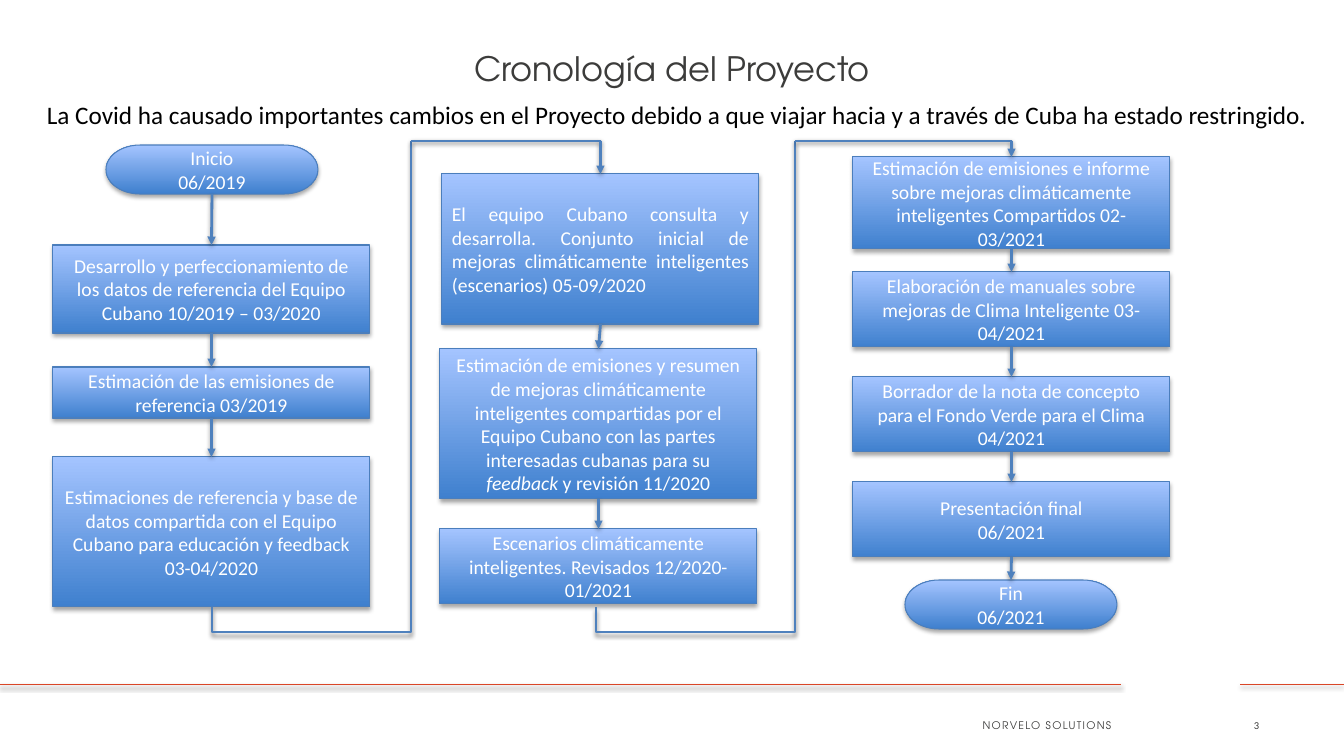
import pptx
import pptx.util
import pptx.dml.color
import pptx.enum.shapes
import pptx.enum.text
import pptx.oxml
import pptx.oxml.ns

RGBColor = pptx.dml.color.RGBColor
SHAPE = pptx.enum.shapes.MSO_SHAPE
CONNECTOR = pptx.enum.shapes.MSO_CONNECTOR
ALIGN = pptx.enum.text.PP_ALIGN
ANCHOR = pptx.enum.text.MSO_ANCHOR

DARK_BLUE = RGBColor(0x3F, 0x80, 0xCE)
LIGHT_BLUE = RGBColor(0xA4, 0xC4, 0xFF)
BORDER_BLUE = RGBColor(0x4B, 0x7E, 0xBC)
ARROW_BLUE = RGBColor(0x4F, 0x81, 0xBD)
RULE_RED = RGBColor(0xDA, 0x46, 0x27)
GREY = RGBColor(0x3C, 0x3C, 0x3B)
BLACK = RGBColor(0, 0, 0)
WHITE = RGBColor(255, 255, 255)
HEADING_FONT = "TeX Gyre Adventor"
BODY_FONT = "Calibri"

TITLE = "Cronología del Proyecto"
SUBTITLE = ("La Covid ha causado importantes cambios en el Proyecto debido a que "
            "viajar hacia y a través de Cuba ha estado restringido.")
FOOTER = "NORVELO SOLUTIONS"
PAGE_NUMBER = "3"

# Each step: left, top, height, lines of text; asterisks enclose italics.
COLUMNS = [
    [
        (106, 145, 49, ["Inicio", "06/2019"]),
        (53, 245, 88, ["Desarrollo y perfeccionamiento de los datos de referencia "
                       "del Equipo Cubano 10/2019 – 03/2020"]),
        (53, 367, 51, ["Estimación de las emisiones de referencia 03/2019"]),
        (53, 457, 150, ["Estimaciones de referencia y base de datos compartida con el "
                        "Equipo Cubano para educación y feedback", "03-04/2020"]),
    ],
    [
        (442, 174, 150, ["El equipo Cubano consulta y desarrolla. Conjunto inicial de mejoras "
                         "climáticamente inteligentes (escenarios) 05-09/2020"]),
        (440, 349, 150, ["Estimación de emisiones y resumen de mejoras climáticamente "
                         "inteligentes compartidas por el Equipo Cubano con las partes "
                         "interesadas cubanas para su *feedback* y revisión 11/2020"]),
        (440, 529, 75, ["Escenarios climáticamente inteligentes. Revisados 12/2020-01/2021"]),
    ],
    [
        (853, 157, 92, ["Estimación de emisiones e informe sobre mejoras climáticamente "
                        "inteligentes Compartidos 02-03/2021"]),
        (853, 272, 75, ["Elaboración de manuales sobre mejoras de Clima Inteligente 03-04/2021"]),
        (853, 377, 75, ["Borrador de la nota de concepto para el Fondo Verde para el Clima "
                        "04/2021"]),
        (853, 482, 75, ["Presentación final", "06/2021"]),
        (905, 580, 49, ["Fin", "06/2021"]),
    ],
]
TERMINATORS = ("Inicio", "Fin")
JUSTIFIED_STEP = (442, 174)
BOX_WIDTH, TERMINATOR_WIDTH = 317, 212
LOOP_STARTS = [212, 596]
LOOP_WIDTH, LOOP_TOP, LOOP_BOTTOM, LOOP_DROP = 199, 141, 607, 25
RULES = [(1344, 1240), (1121, 0)]
RULE_TOP = 685


def px(length):
    return round(length * 914400 / 100.8)


def add_shadow(shape, opacity, distance):
    properties = shape._element.spPr
    effects = properties.find(pptx.oxml.ns.qn("a:effectLst"))
    if effects is not None:
        properties.remove(effects)
    properties.append(pptx.oxml.parse_xml(
        f'<a:effectLst {pptx.oxml.ns.nsdecls("a")}>'
        f'<a:outerShdw blurRad="40000" dist="{distance}" dir="5400000" rotWithShape="0">'
        f'<a:srgbClr val="000000"><a:alpha val="{opacity * 1000}"/></a:srgbClr>'
        '</a:outerShdw></a:effectLst>'))


def write(frame, lines, size, font, color, align):
    frame.vertical_anchor = ANCHOR.MIDDLE
    for index, line in enumerate(lines):
        paragraph = frame.paragraphs[0] if index == 0 else frame.add_paragraph()
        paragraph.alignment = align
        paragraph.font.size = pptx.util.Pt(size)
        paragraph.font.name = font
        paragraph.font.color.rgb = color
        for position, part in enumerate(line.split("*")):
            run = paragraph.add_run()
            run.text = part
            if position % 2:
                run.font.italic = True


def add_text(slide, area, text, size, font, color, align, wrap=True):
    box = slide.shapes.add_textbox(*map(px, area))
    box.text_frame.word_wrap = wrap
    write(box.text_frame, [text], size, font, color, align)
    return box


def add_step(slide, left, top, height, lines):
    terminator = lines[0] in TERMINATORS
    kind = SHAPE.FLOWCHART_TERMINATOR if terminator else SHAPE.FLOWCHART_PROCESS
    width = TERMINATOR_WIDTH if terminator else BOX_WIDTH
    shape = slide.shapes.add_shape(kind, px(left), px(top), px(width), px(height))
    shape.fill.gradient()
    shape.fill.gradient_angle = 90
    for stop, color, position in zip(shape.fill.gradient_stops, (DARK_BLUE, LIGHT_BLUE), (0, 1)):
        stop.color.rgb = color
        stop.position = position
    shape.line.color.rgb = BORDER_BLUE
    shape.line.width = pptx.util.Pt(0.75)
    shape.shadow.inherit = False
    add_shadow(shape, 35, 23000)
    align = ALIGN.JUSTIFY if (left, top) == JUSTIFIED_STEP else ALIGN.CENTER
    write(shape.text_frame, lines, 14, BODY_FONT, WHITE, align)
    return shape


def add_line(slide, start, end, color=ARROW_BLUE, width=2, arrow=False, kind=CONNECTOR.STRAIGHT):
    line = slide.shapes.add_connector(kind, *map(px, start + end))
    line.line.color.rgb = color
    line.line.width = pptx.util.Pt(width)
    if arrow:
        line.line._get_or_add_ln().append(pptx.oxml.parse_xml(
            f'<a:tailEnd {pptx.oxml.ns.nsdecls("a")} type="triangle"/>'))
    add_shadow(line, 38, 20000)
    return line


def add_loop(slide, start, target):
    rise = LOOP_BOTTOM - LOOP_TOP
    middle_x = start + LOOP_WIDTH / 2
    middle_y = (LOOP_TOP + LOOP_BOTTOM) / 2
    loop = add_line(slide, (middle_x + rise / 2, middle_y + LOOP_WIDTH / 2),
                    (middle_x - rise / 2, middle_y - LOOP_WIDTH / 2), kind=CONNECTOR.ELBOW)
    properties = loop._element.spPr
    properties.find(pptx.oxml.ns.qn("a:xfrm")).set("rot", "5400000")
    geometry = properties.find(pptx.oxml.ns.qn("a:prstGeom"))
    for child in list(geometry):
        geometry.remove(child)
    geometry.append(pptx.oxml.parse_xml(
        f'<a:avLst {pptx.oxml.ns.nsdecls("a")}>'
        f'<a:gd name="adj1" fmla="val {round(-LOOP_DROP / rise * 100000)}"/></a:avLst>'))
    center = (target.left + target.width / 2) / px(1)
    add_line(slide, (start + LOOP_WIDTH, LOOP_TOP), (center, LOOP_TOP))
    arrow = add_line(slide, (center, LOOP_TOP), (center, target.top / px(1)), arrow=True)
    arrow.end_connect(target, 0)


def main():
    presentation = pptx.Presentation()
    presentation.slide_width, presentation.slide_height = px(1344), px(756)
    slide = presentation.slides.add_slide(presentation.slide_layouts[6])
    for start, end in RULES:
        add_line(slide, (start, RULE_TOP), (end, RULE_TOP), RULE_RED, 0.75)
    add_text(slide, (67, 5, 1210, 126), TITLE, 24, HEADING_FONT, GREY, ALIGN.CENTER)
    footer = add_text(slide, (696, 705, 425, 40), FOOTER, 7.5, HEADING_FONT, GREY, ALIGN.RIGHT)
    footer.text_frame.paragraphs[0].runs[0]._r.get_or_add_rPr().set("spc", "90")
    add_text(slide, (1244, 705, 83, 40), PAGE_NUMBER, 7.5, BODY_FONT, GREY, ALIGN.LEFT)
    subtitle = add_text(slide, (37, 94, 1289, 40), SUBTITLE, 18, BODY_FONT, BLACK,
                        ALIGN.LEFT, wrap=False)
    subtitle.text_frame.auto_size = pptx.enum.text.MSO_AUTO_SIZE.SHAPE_TO_FIT_TEXT

    columns = [[add_step(slide, *step) for step in column] for column in COLUMNS]
    for start, column in zip(LOOP_STARTS, columns[1:]):
        add_loop(slide, start, column[0])
    for column in columns:
        for upper, lower in zip(column, column[1:]):
            arrow = add_line(slide, (0, 0), (0, 0), arrow=True)
            arrow.begin_connect(upper, 2)
            arrow.end_connect(lower, 0)
    presentation.save("out.pptx")


if __name__ == "__main__":
    main()
